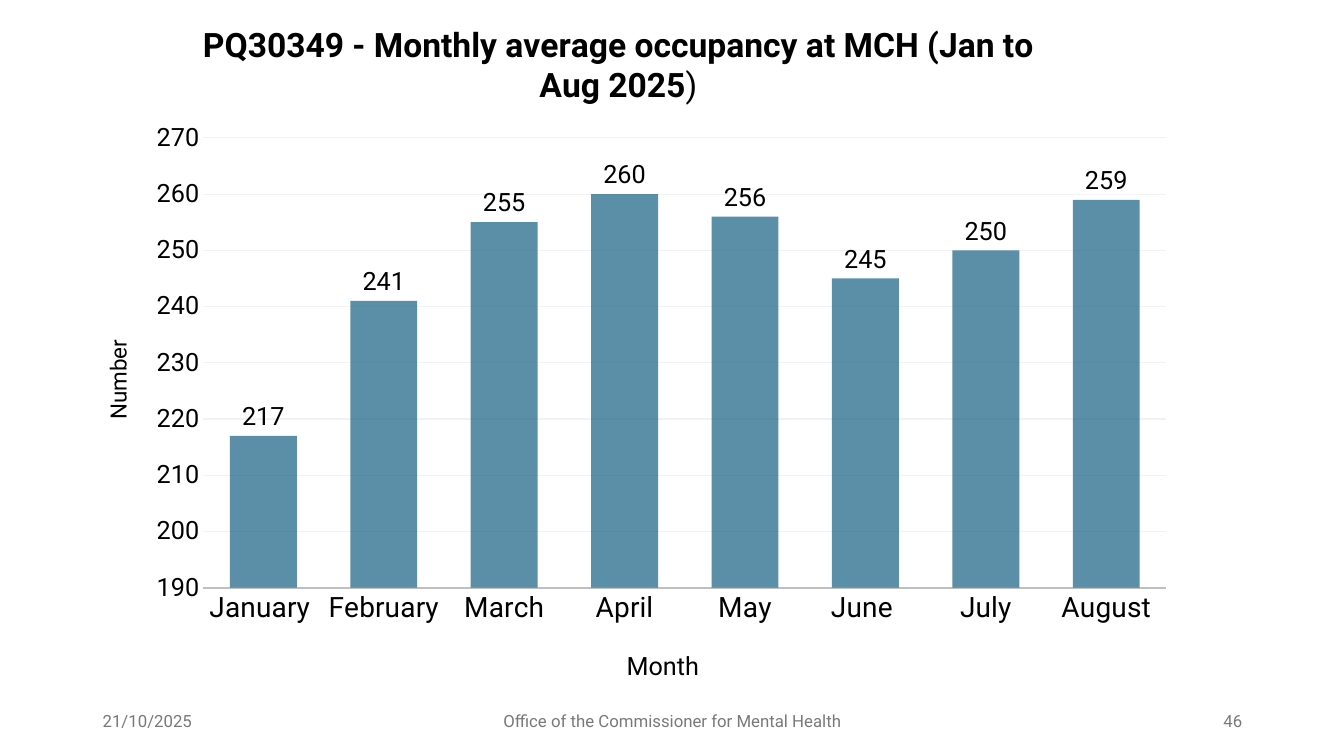
from lxml.etree import SubElement
from pptx import Presentation
from pptx.chart.data import CategoryChartData
from pptx.dml.color import RGBColor
from pptx.enum.chart import XL_CHART_TYPE, XL_LABEL_POSITION, XL_TICK_MARK
from pptx.enum.text import MSO_ANCHOR, PP_ALIGN
from pptx.oxml import parse_xml
from pptx.oxml.ns import nsdecls, qn
from pptx.util import Inches, Pt

FONT = "Roboto"
BLACK, GREY, TEAL = "000000", "797979", "156082"
AXIS_GREY, GRID_GREY = "BFBFBF", "F2F2F2"

OCCUPANCY = {
    "January ": 217, "February": 241, "March": 255, "April": 260,
    "May": 256, "June ": 245, "July": 250, "August": 259,
}
CHART_TITLE = [("PQ30349 - Monthly average occupancy at MCH (Jan to Aug 2025", True), (")", False)]
CHART_AREA = (0.77, 0, 11.02, 6.95)
PLOT_LAYOUT = {"x": 0.113, "y": 0.197, "w": 0.867, "h": 0.642}
FOOTERS = [
    ("21/10/2025", 0.92, 3, PP_ALIGN.LEFT),
    ("Office of the Commissioner for Mental Health", 4.42, 4.5, PP_ALIGN.CENTER),
    ("46", 9.42, 3, PP_ALIGN.RIGHT),
]


def colour(value):
    return RGBColor.from_string(value)


def style_font(font, size, shade=BLACK, bold=False):
    for name, value in {"name": FONT, "size": Pt(size), "bold": bold}.items():
        setattr(font, name, value)
    font.color.rgb = colour(shade)


def style_line(line, shade, width):
    line.color.rgb = colour(shade)
    line.width = Pt(width)


def write_title(title, runs, size):
    para = title.text_frame.paragraphs[0]
    for text, bold in runs:
        span = para.add_run()
        span.text = text
        style_font(span.font, size, bold=bold)


def place(layout, values):
    manual = SubElement(layout, qn("c:manualLayout"))
    if "w" in values:
        SubElement(manual, qn("c:layoutTarget")).set("val", "inner")
    for key in ("x", "y"):
        SubElement(manual, qn(f"c:{key}Mode")).set("val", "edge")
    for key, value in values.items():
        SubElement(manual, qn(f"c:{key}")).set("val", str(value))


def place_plot(chart):
    plot_area = chart.plots[0]._element.getparent()
    layout = plot_area.find(qn("c:layout"))
    if layout is None:
        layout = parse_xml(f"<c:layout {nsdecls('c')}/>")
        plot_area.insert(0, layout)
    place(layout, PLOT_LAYOUT)


def place_title(title, x, y):
    element = title._element
    layout = element.get_or_add_layout() if hasattr(element, "get_or_add_layout") else element.find(qn("c:layout"))
    place(layout, {"x": x, "y": y})


def add_occupancy_chart(page):
    data = CategoryChartData()
    data.categories = list(OCCUPANCY)
    data.add_series("Series 1", list(OCCUPANCY.values()))
    frame = page.shapes.add_chart(
        XL_CHART_TYPE.COLUMN_CLUSTERED, *map(Inches, CHART_AREA), data)
    chart = frame.chart
    style_font(chart.font, 10)
    chart.has_legend = False
    chart.has_title = True
    write_title(chart.chart_title, CHART_TITLE, 24)
    place_title(chart.chart_title, 0.11, 0.03)
    chart.chart_title.include_in_layout = False

    months, numbers = chart.category_axis, chart.value_axis
    for axis, name, title_size, tick_size, x, y in (
        (months, "Month", 18, 20, 0.49, 0.92),
        (numbers, "Number", 16, 18, 0.02, 0.48),
    ):
        write_title(axis.axis_title, [(name, False)], title_size)
        place_title(axis.axis_title, x, y)
        style_font(axis.tick_labels.font, tick_size)
        axis.major_tick_mark = axis.minor_tick_mark = XL_TICK_MARK.NONE
    numbers.axis_title.text_frame._txBody.bodyPr.set("rot", "-5400000")
    style_line(months.format.line, AXIS_GREY, 1.25)
    numbers.format.line.fill.background()
    style_line(numbers.major_gridlines.format.line, GRID_GREY, 0.75)
    limits = {"minimum_scale": 190, "maximum_scale": 270, "major_unit": 10}
    for name, value in limits.items():
        setattr(numbers, name, value)

    plot = chart.plots[0]
    bars = {"gap_width": 80, "overlap": 25, "vary_by_categories": False, "has_data_labels": True}
    for name, value in bars.items():
        setattr(plot, name, value)
    labels = plot.data_labels
    labels.show_value = True
    labels.position = XL_LABEL_POSITION.OUTSIDE_END
    style_font(labels.font, 18)
    fill = plot.series[0].format.fill
    fill.solid()
    fill.fore_color.rgb = colour(TEAL)
    shade = plot.series[0]._element.find(f".//{qn('a:srgbClr')}")
    SubElement(shade, qn("a:alpha")).set("val", "70000")
    place_plot(chart)


def add_footer(page, text, left, width, alignment):
    box = page.shapes.add_textbox(Inches(left), Inches(6.95), Inches(width), Inches(0.4))
    box.text_frame.word_wrap = True
    box.text_frame.vertical_anchor = MSO_ANCHOR.MIDDLE
    para = box.text_frame.paragraphs[0]
    para.alignment = alignment
    span = para.add_run()
    span.text = text
    style_font(span.font, 12, GREY)


def main():
    deck = Presentation()
    deck.slide_width, deck.slide_height = Inches(13.33), Inches(7.5)
    page = deck.slides.add_slide(deck.slide_layouts[6])
    add_occupancy_chart(page)
    for footer in FOOTERS:
        add_footer(page, *footer)
    deck.save("out.pptx")


if __name__ == "__main__":
    main()
